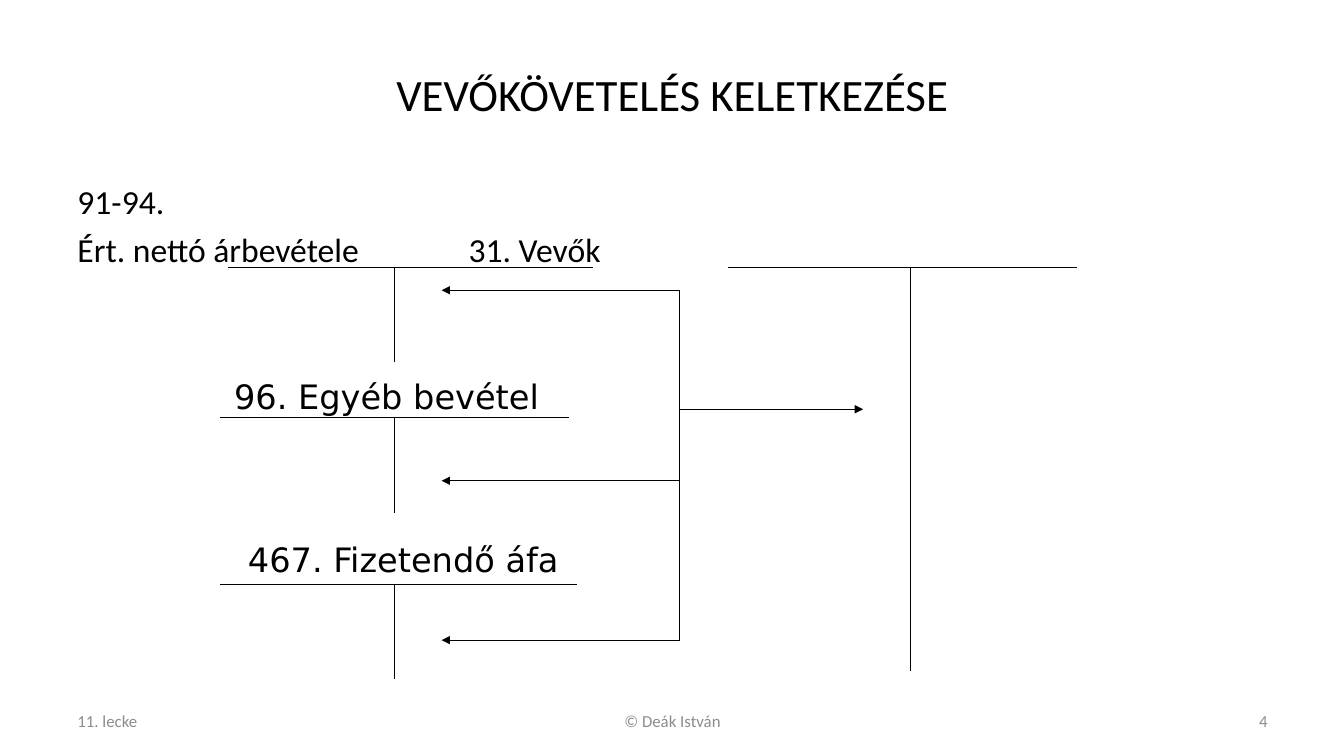
from lxml import etree
from pptx import Presentation
from pptx import util as u
from pptx.dml.color import RGBColor
from pptx.enum import shapes, text
from pptx.oxml import ns

COLORS = {"ink": "000000", "footer": "8C8C8C"}
ALIGN = text.PP_ALIGN

deck = Presentation()
deck.slide_width, deck.slide_height = u.Inches(13.33), u.Inches(7.5)
page = deck.slides.add_slide(deck.slide_layouts[6])


def add_text(words, left, top, width, height, size=24, font="Calibri", color="ink",
             align=ALIGN.LEFT, anchor=text.MSO_ANCHOR.MIDDLE, wrap=True, hanging=0, before=0):
    box = page.shapes.add_textbox(*map(u.Inches, (left, top, width, height)))
    frame = box.text_frame
    frame.word_wrap, frame.vertical_anchor = wrap, anchor
    for number, line in enumerate(words.split("\n")):
        para = frame.add_paragraph() if number else frame.paragraphs[0]
        para.alignment, para.space_before = align, u.Pt(before)
        if hanging:
            props = para._p.get_or_add_pPr()
            props.set("marL", str(u.Inches(hanging)))
            props.set("indent", str(-u.Inches(hanging)))
        span = para.add_run()
        span.text = line
        span.font.size, span.font.name = u.Pt(size), font
        span.font.color.rgb = RGBColor.from_string(COLORS[color])


def add_line(x1, y1, x2, y2, arrow=False):
    line = page.shapes.add_connector(shapes.MSO_CONNECTOR.STRAIGHT,
                                     *map(u.Inches, (x1, y1, x2, y2)))
    line.line.width = u.Pt(0.75)
    line.line.color.rgb = RGBColor.from_string(COLORS["ink"])
    if arrow:
        etree.SubElement(line.line._get_or_add_ln(), ns.qn("a:tailEnd"), type="triangle")
    etree.SubElement(line._element.spPr, ns.qn("a:effectLst"))


# Title and the upper account names
add_text("VEVŐKÖVETELÉS KELETKEZÉSE", 0.67, 0.3, 12, 1.25, size=32, align=ALIGN.CENTER)
add_text("91-94.\nÉrt. nettó árbevétele\t\t\t31. Vevők", 0.67, 1.75, 12, 4.95,
         anchor=text.MSO_ANCHOR.TOP, hanging=0.38, before=4.8)

# Footer
for words, left, width, align in [("11. lecke", 0.67, 3.11, ALIGN.LEFT),
                                  ("© Deák István", 4.56, 4.22, ALIGN.CENTER),
                                  ("4", 9.56, 3.11, ALIGN.RIGHT)]:
    add_text(words, left, 6.95, width, 0.4, size=12, color="footer", align=align)

# Lower account names
for words, left, top, width in [("96. Egyéb bevétel", 2.22, 3.68, 3.23),
                                ("467. Fizetendő áfa", 2.34, 5.3, 3.32)]:
    add_text(words, left, top, width, 0.5, font="DejaVu Sans", align=ALIGN.CENTER,
             anchor=text.MSO_ANCHOR.TOP, wrap=False)

# T-accounts: bar from left to right, stem down from the bar
for left, right, top, stem, depth in [(2.26, 5.88, 2.65, 3.91, 0.94),
                                      (2.18, 5.64, 4.14, 3.91, 0.95),
                                      (2.18, 5.72, 5.8, 3.91, 0.94),
                                      (7.22, 10.68, 2.65, 9.03, 4.01)]:
    add_line(left, top, right, top)
    add_line(stem, top, stem, top + depth)

# Postings: trunk, arrows to the credit sides, arrow to the debit side
trunk, credits = 6.74, [2.88, 4.77, 6.35]
add_line(trunk, credits[-1], trunk, credits[0])
for y in credits:
    add_line(trunk, y, 4.38, y, arrow=True)
add_line(trunk, 4.06, 8.56, 4.06, arrow=True)

deck.save("out.pptx")
